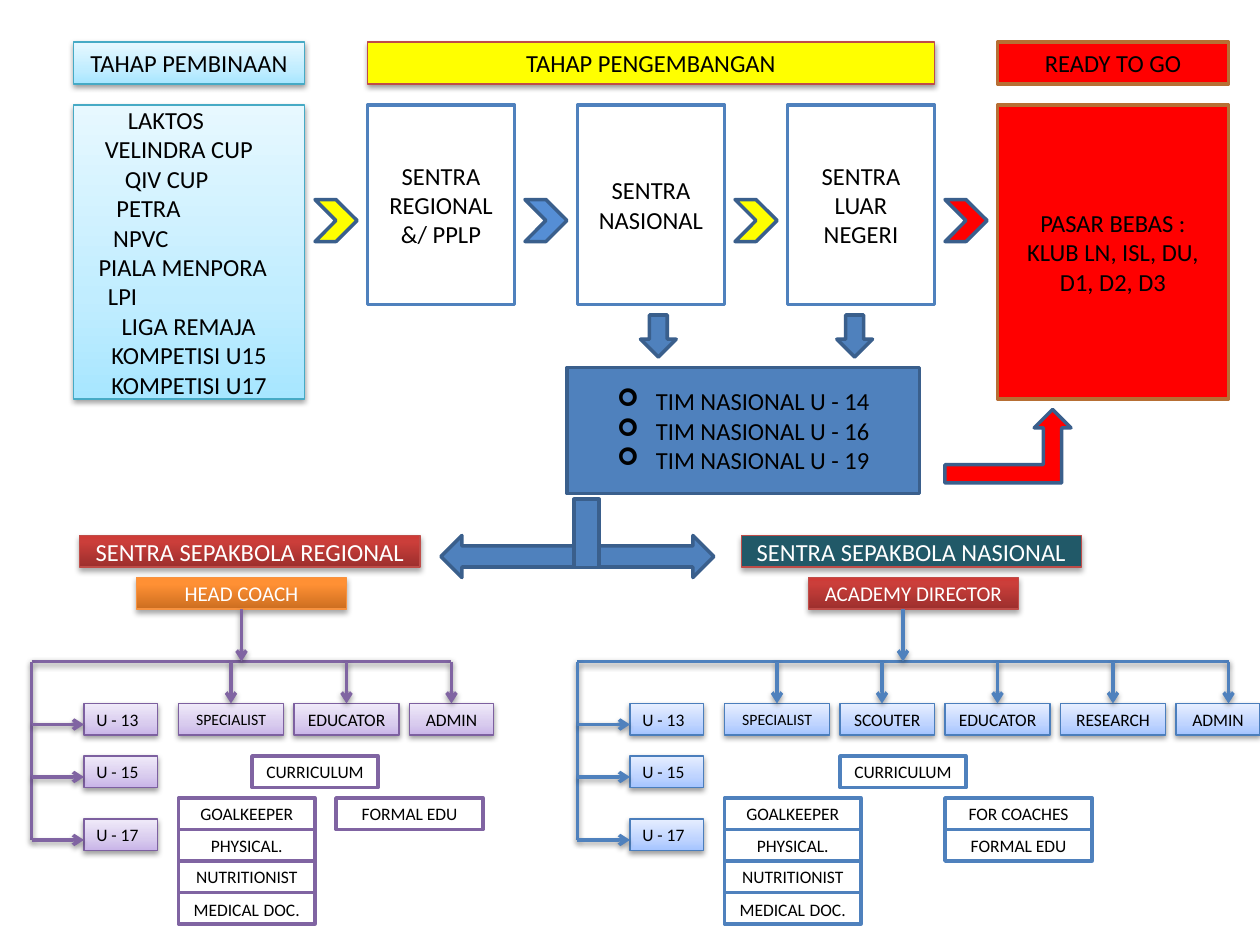
from copy import deepcopy
from lxml import etree
from pptx import Presentation
from pptx import util as u
from pptx.dml.color import RGBColor
from pptx.enum import shapes, text
from pptx.oxml import ns

SCALE = 7620
FONT = "Calibri"
RECT = shapes.MSO_SHAPE.RECTANGLE
LEFT, CENTER = text.PP_ALIGN.LEFT, text.PP_ALIGN.CENTER

BLACK = RGBColor(0x00, 0x00, 0x00)
WHITE = RGBColor(0xFF, 0xFF, 0xFF)
YELLOW = RGBColor(0xFF, 0xFF, 0x00)
RED = RGBColor(0xFF, 0x00, 0x00)
BLUE = RGBColor(0x4F, 0x81, 0xBD)
BLUE_EDGE = RGBColor(0x3A, 0x5F, 0x8C)
BLUE_THIN = RGBColor(0x4B, 0x7E, 0xBC)
SKY = RGBColor(0x55, 0x8E, 0xD5)
PURPLE = RGBColor(0x80, 0x64, 0xA2)
PURPLE_THIN = RGBColor(0x7D, 0x60, 0xA0)
CYAN_EDGE = RGBColor(0x46, 0xAA, 0xC5)
RED_EDGE = RGBColor(0xBF, 0x4C, 0x48)
BROWN = RGBColor(0xB7, 0x6F, 0x34)
ORANGE_EDGE = RGBColor(0xF6, 0x92, 0x40)
TEAL = RGBColor(0x21, 0x59, 0x68)


def blend(middle, *codes):
    return [(stop, RGBColor.from_string(code))
            for stop, code in zip((0, middle, 1), codes)]


CYAN_BLEND = blend(0.35, "A7E6FF", "C1EDFF", "E7F8FF")
BLUE_BLEND = blend(0.35, "A4C4FF", "BFD4FF", "E6EEFF")
PURPLE_BLEND = blend(0.35, "C9B5E8", "D8CBEE", "F0EAF9")
RED_BLEND = blend(0.8, "9C2F2D", "CB3E3A", "CE3B37")
ORANGE_BLEND = blend(0.8, "CC6E20", "FF9034", "FF9136")


def px(*lengths):
    return [u.Emu(length * SCALE) for length in lengths]


def add_part(parent, tag, **attributes):
    return etree.SubElement(parent, ns.qn(tag), attributes)


def cast_shadow(effects, alpha, distance):
    shadow = add_part(effects, "a:outerShdw", blurRad="40000", dist=str(distance),
                      dir="5400000", rotWithShape="0")
    color = add_part(shadow, "a:srgbClr", val="000000")
    add_part(color, "a:alpha", val=str(alpha * 1000))


def paint(shape, fill):
    if isinstance(fill, RGBColor):
        shape.fill.solid()
        shape.fill.fore_color.rgb = fill
        return
    shape.fill.gradient()
    shape.fill.gradient_angle = 90
    stops = shape._element.spPr.find(".//" + ns.qn("a:gsLst"))
    stops.append(deepcopy(stops[-1]))
    for stop, (position, color) in zip(shape.fill.gradient_stops, fill):
        stop.position = position
        stop.color.rgb = color


def add_figure(page, kind, at, fill, edge, width=2, shadow=None):
    shape = page.shapes.add_shape(kind, *px(*at))
    paint(shape, fill)
    shape.line.color.rgb = edge
    shape.line.width = u.Pt(width)
    shape.shadow.inherit = False
    if shadow:
        cast_shadow(shape._element.spPr.find(ns.qn("a:effectLst")), *shadow)
    return shape


def add_span(para, words, size, color):
    span = para.add_run()
    span.text = words
    span.font.name = FONT
    span.font.size = u.Pt(size)
    span.font.color.rgb = color


def write(box, lines, size, color=BLACK, align=CENTER, indents=(), bullet=None):
    frame = box.text_frame
    frame.word_wrap = True
    frame.vertical_anchor = text.MSO_ANCHOR.MIDDLE
    for i, line in enumerate(lines):
        para = frame.paragraphs[0] if i == 0 else frame.add_paragraph()
        para.alignment = align
        props = para._p.get_or_add_pPr()
        if i < len(indents):
            para.alignment = LEFT
            props.set("marL", str(indents[i] * SCALE))
        if bullet:
            props.set("marL", str(37 * SCALE))
            props.set("indent", str(-37 * SCALE))
            add_part(props, "a:buFont", typeface="Wingdings")
            add_part(props, "a:buChar", char=bullet)
        for words, points in [(line, size)] if isinstance(line, str) else line:
            add_span(para, words, points, color)


def add_plain(page, at, fill, edge, lines, size=14):
    write(add_figure(page, RECT, at, fill, edge), lines, size)


def add_soft(page, at, fill, edge, lines, size=14, **style):
    box = add_figure(page, RECT, at, fill, edge, 0.75, (38, 20000))
    write(box, lines, size, **style)


def add_banner(page, at, fill, edge, label, size):
    box = add_figure(page, RECT, at, fill, edge, 0.75, (35, 23000))
    write(box, [label], size, WHITE)


def add_line(page, start, end, color, arrow=True):
    line = page.shapes.add_connector(shapes.MSO_CONNECTOR.STRAIGHT, *px(*start, *end))
    line.line.color.rgb = color
    line.line.width = u.Pt(2)
    if arrow:
        add_part(line.line._get_or_add_ln(), "a:tailEnd", type="arrow")
    cast_shadow(add_part(line._element.spPr, "a:effectLst"), 38, 20000)


def add_stages(page):
    add_soft(page, (70, 40, 220, 40), CYAN_BLEND, CYAN_EDGE, ["TAHAP PEMBINAAN"])
    add_soft(page, (350, 40, 540, 40), YELLOW, RED_EDGE, ["TAHAP PENGEMBANGAN"])
    add_plain(page, (950, 40, 220, 40), RED, BROWN, ["READY TO GO"])
    contests = [("LAKTOS", 40), ("VELINDRA CUP", 18), ("QIV CUP", 37), ("PETRA", 29),
                ("NPVC", 26), ("PIALA MENPORA", 12), ("LPI", 21), ("LIGA REMAJA", 34)]
    names = [name for name, indent in contests] + ["KOMPETISI U15", "KOMPETISI U17"]
    add_soft(page, (70, 100, 220, 280), CYAN_BLEND, CYAN_EDGE, names,
             indents=[indent for name, indent in contests])
    centers = ["SENTRA REGIONAL &/ PPLP", "SENTRA NASIONAL", "SENTRA LUAR NEGERI"]
    for i, center in enumerate(centers):
        add_plain(page, (350 + 200 * i, 100, 140, 190), WHITE, BLUE, [center])
    add_plain(page, (950, 100, 220, 280), RED, BROWN,
              ["PASAR BEBAS :", "KLUB LN, ISL, DU, D1, D2, D3"])
    for i, color in enumerate([YELLOW, SKY, YELLOW, RED]):
        add_figure(page, shapes.MSO_SHAPE.CHEVRON, (300 + 200 * i, 190, 40, 40),
                   color, BLUE_EDGE)


def add_national_teams(page):
    kinds = shapes.MSO_SHAPE
    for left in (610, 797):
        add_figure(page, kinds.DOWN_ARROW, (left, 300, 34, 40), BLUE, BLUE_EDGE)
    teams = add_figure(page, RECT, (540, 350, 336, 120), BLUE, BLUE_EDGE)
    write(teams, [f"TIM NASIONAL U - {age}" for age in (14, 16, 19)], 14, bullet="➢")
    add_figure(page, kinds.BENT_UP_ARROW, (900, 390, 120, 70), RED, BLUE_EDGE)
    add_figure(page, kinds.LEFT_ARROW, (420, 510, 130, 40), BLUE, BLUE_EDGE)
    add_figure(page, kinds.RIGHT_ARROW, (570, 510, 110, 40), BLUE, BLUE_EDGE)
    stem = add_figure(page, kinds.FLOWCHART_PROCESS, (526, 496, 65, 24), BLUE, BLUE_EDGE)
    stem.rotation = 90


def add_branch(page, left, lead, roles, curriculum, courses, color, fill, edge):
    trunk = 630
    add_line(page, (left, trunk), (roles[-1][3], trunk), color, arrow=False)
    add_line(page, (left, trunk), (left, 800), color, arrow=False)
    add_line(page, (lead, 580), (lead, trunk), color)
    for age, top in ((13, 670), (15, 720), (17, 780)):
        add_soft(page, (left + 50, top, 70, 30), fill, edge, [f"U - {age}"], 10, align=LEFT)
        add_line(page, (left, top + 20), (left + 50, top + 20), color)
    for role, start, width, drop in roles:
        size = 9 if role == "SPECIALIST" else 10
        add_soft(page, (start, 670, width, 30), fill, edge, [role], size)
        add_line(page, (drop, trunk), (drop, 670), color)
    doctor = [("MEDICAL", 10), (" ", 12), ("DOC.", 10)]
    staff = ["GOALKEEPER", "PHYSICAL.", "NUTRITIONIST", doctor]
    for names, start, width in ((staff, left + 140, 130), courses):
        for i, name in enumerate(names):
            add_plain(page, (start, 760 + 30 * i, width, 30), WHITE, color, [name], 10)
    add_plain(page, (curriculum, 720, 120, 30), WHITE, color, ["CURRICULUM"], 10)


def main():
    deck = Presentation()
    deck.slide_width, deck.slide_height = px(1200, 900)
    page = deck.slides.add_slide(deck.slide_layouts[6])
    add_stages(page)
    add_national_teams(page)
    add_banner(page, (76, 510, 324, 30), RED_BLEND, RED_EDGE, "SENTRA SEPAKBOLA REGIONAL", 14)
    add_banner(page, (706, 510, 324, 30), TEAL, RED_EDGE, "SENTRA SEPAKBOLA NASIONAL", 14)
    add_banner(page, (130, 550, 200, 30), ORANGE_BLEND, ORANGE_EDGE, "HEAD COACH", 12)
    add_banner(page, (770, 550, 200, 30), RED_BLEND, RED_EDGE, "ACADEMY DIRECTOR", 12)
    regional = [("SPECIALIST", 170, 100, 220), ("EDUCATOR", 280, 100, 330),
                ("ADMIN", 390, 80, 430)]
    national = [("SPECIALIST", 690, 100, 740), ("SCOUTER", 800, 90, 840),
                ("EDUCATOR", 900, 100, 950), ("RESEARCH", 1010, 100, 1060),
                ("ADMIN", 1120, 80, 1170)]
    add_branch(page, 30, 230, regional, 240, (["FORMAL EDU"], 320, 140),
               PURPLE, PURPLE_BLEND, PURPLE_THIN)
    add_branch(page, 550, 860, national, 800, (["FOR COACHES", "FORMAL EDU"], 900, 140),
               BLUE, BLUE_BLEND, BLUE_THIN)
    deck.save("out.pptx")


if __name__ == "__main__":
    main()
